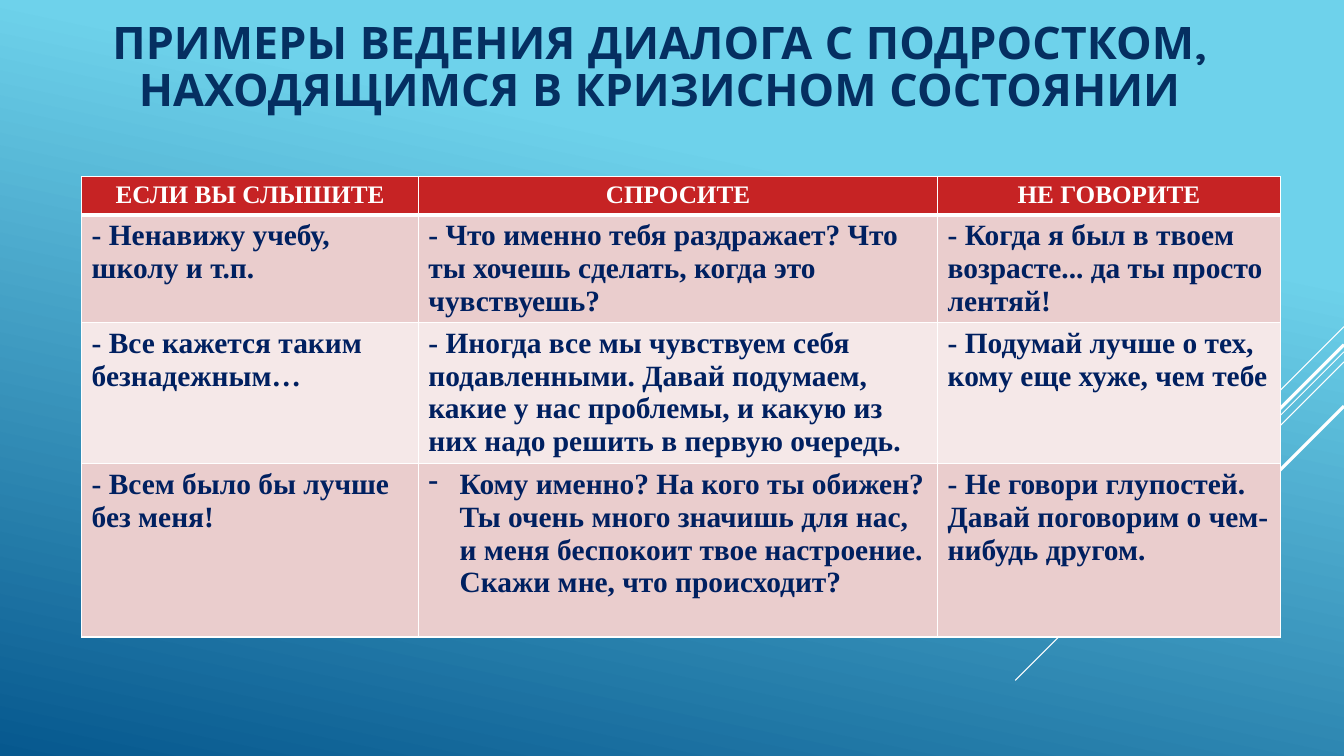
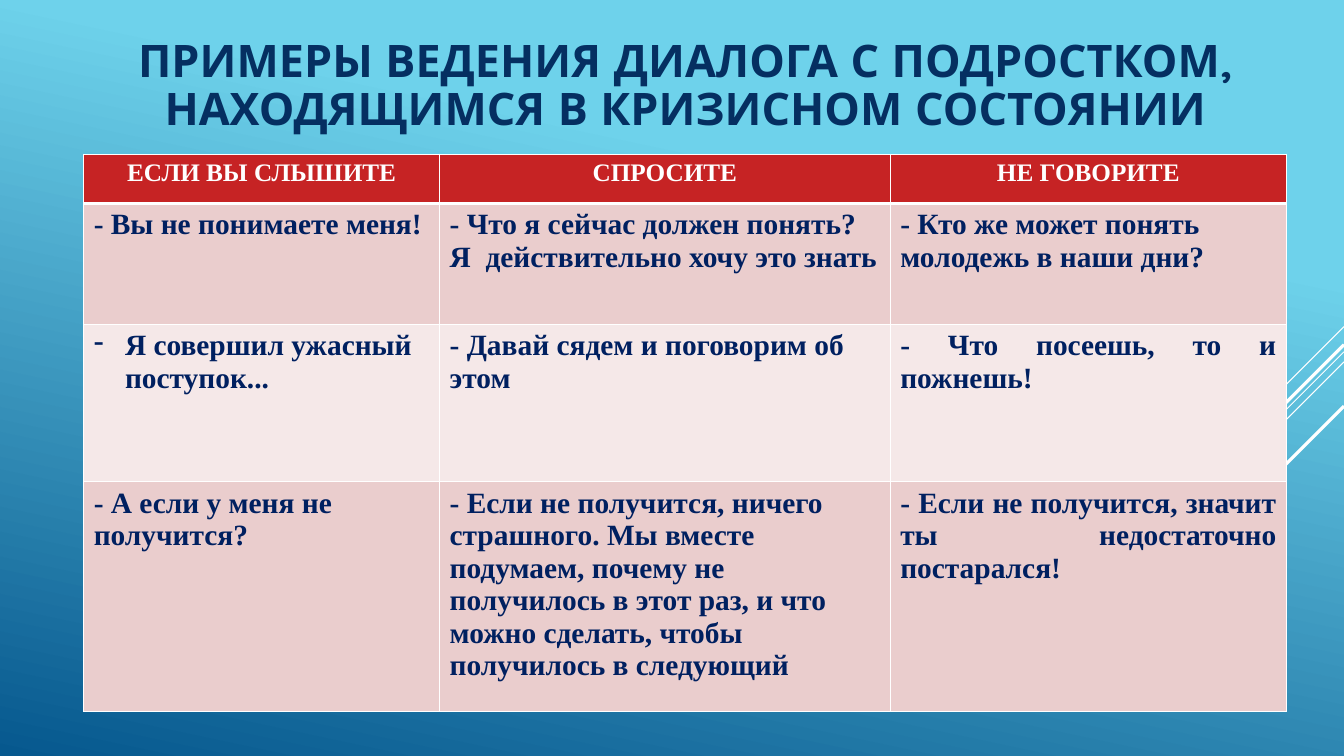
from dataclasses import dataclass

from lxml import etree
from pptx import Presentation
from pptx.dml.color import RGBColor
from pptx.enum.shapes import MSO_CONNECTOR
from pptx.enum.text import MSO_ANCHOR, MSO_AUTO_SIZE, PP_ALIGN
from pptx.oxml.ns import qn
from pptx.util import Inches, Pt

LEFT, CENTER, JUSTIFY = PP_ALIGN.LEFT, PP_ALIGN.CENTER, PP_ALIGN.JUSTIFY
MIDDLE = MSO_ANCHOR.MIDDLE
NO_AUTOFIT = MSO_AUTO_SIZE.NONE
STRAIGHT = MSO_CONNECTOR.STRAIGHT
TITLE_ONLY = 5


@dataclass(frozen=True)
class Theme:
    """Colours, fonts and type sizes of the deck."""
    sky: str = "6ED2EB"
    deep: str = "06588E"
    white: str = "FFFFFF"
    title: str = "052F61"
    text: str = "002060"
    header: str = "C62324"
    bands: tuple = ("EACDCD", "F5E8E8")
    title_font: str = "Quicksand"
    table_font: str = "Times New Roman"
    title_size: int = 32
    header_size: int = 18
    text_size: int = 21


@dataclass(frozen=True)
class Bullet:
    """Cell text with a hanging dash."""
    text: str


@dataclass(frozen=True)
class Justified:
    """Cell text aligned to both edges."""
    text: str


THEME = Theme()
TITLE = "ПРИМЕРЫ ВЕДЕНИЯ ДИАЛОГА С ПОДРОСТКОМ, НАХОДЯЩИМСЯ В КРИЗИСНОМ СОСТОЯНИИ"
HEADERS = ("ЕСЛИ ВЫ СЛЫШИТЕ", "СПРОСИТЕ", "НЕ ГОВОРИТЕ")
RAYS = ((3.24, 1, 0.75), (3.49, 3.26, 0.75), (3.59, 2.07, 0.75),
        (3.42, 1.91, 2.25), (4.03, 1.39, 2.25))

SLIDES = (
    dict(
        title_box=(0, -0.14, 13.09, 1.65),
        table_at=(0.81, 1.75),
        cols=(3.34, 5.15, 3.4),
        heights=(0.38, 1.06, 1.4, 1.72),
        rows=(
            ("- Ненавижу учебу, школу и т.п.",
             "- Что именно тебя раздражает? Что ты хочешь сделать, когда это чувствуешь?",
             "- Когда я был в твоем возрасте... да ты просто лентяй!"),
            ("- Все кажется таким безнадежным…",
             "- Иногда все мы чувствуем себя подавленными. Давай подумаем, "
             "какие у нас проблемы, и какую из них надо решить в первую очередь.",
             "- Подумай лучше о тех, кому еще хуже, чем тебе"),
            ("- Всем было бы лучше без меня!",
             Bullet("Кому именно? На кого ты обижен? Ты очень много значишь для нас, "
                    "и меня беспокоит твое настроение. Скажи мне, что происходит?"),
             "- Не говори глупостей. Давай поговорим о чем-нибудь другом."),
        ),
    ),
    dict(
        title_box=(0.62, 0.04, 12.36, 1.65),
        table_at=(0.83, 1.53),
        cols=(3.53, 4.47, 3.93),
        heights=(0.49, 1.2, 1.56, 2.28),
        rows=(
            ("- Вы не понимаете меня!",
             "- Что я сейчас должен понять? Я  действительно хочу это знать",
             "- Кто же может понять молодежь в наши дни?"),
            (Bullet("Я совершил ужасный поступок..."),
             "- Давай сядем и поговорим об этом",
             Justified("- Что посеешь, то и пожнешь!")),
            ("- А если у меня не получится?",
             "- Если не получится, ничего страшного. Мы вместе подумаем, почему не "
             "получилось в этот раз, и что можно сделать, чтобы получилось в следующий",
             Justified("- Если не получится, значит ты недостаточно постарался!")),
        ),
    ),
)


def rgb(color):
    """Turn a hex string into a colour."""
    return RGBColor.from_string(color)


def style_paragraph(p, font, size, color, align):
    """Apply bold type and alignment to a paragraph."""
    p.alignment = align
    p.font.name, p.font.size, p.font.bold = font, Pt(size), True
    p.font.color.rgb = rgb(color)


def add_background(master):
    """Fill the master with the blue gradient."""
    fill = master.background.fill
    fill.gradient()
    fill.gradient_angle = 258
    stops = ((0.27, THEME.sky), (1, THEME.deep))
    for stop, (position, color) in zip(fill.gradient_stops, stops):
        stop.position = position
        stop.color.rgb = rgb(color)


def add_rays(slide, master, right):
    """Draw the diagonal rays from the right edge and move them to the master."""
    for i, (top, run, width) in enumerate(RAYS):
        ray = slide.shapes.add_connector(
            STRAIGHT, Inches(right), Inches(top), Inches(right - run), Inches(top + run))
        ray.line.color.rgb = rgb(THEME.white)
        ray.line.width = Pt(width)
        ray.name = f"Ray {i + 1}"
        el = ray.element
        etree.SubElement(el.spPr, qn("a:effectLst"))
        el.nvCxnSpPr.cNvPr.id = 100 + i
        master.shapes.element.append(el)


def add_title(slide, box):
    """Place the title placeholder in its box."""
    sp = slide.shapes.title
    sp.left, sp.top, sp.width, sp.height = map(Inches, box)
    tf = sp.text_frame
    tf.text = TITLE
    tf.word_wrap = True
    tf.auto_size = NO_AUTOFIT
    tf.vertical_anchor = MIDDLE
    p = tf.paragraphs[0]
    p.line_spacing = 0.88
    style_paragraph(p, THEME.title_font, THEME.title_size, THEME.title, CENTER)


def set_borders(cell, bottom):
    """Give a cell white borders with the chosen bottom width."""
    tcPr = cell._tc.get_or_add_tcPr()
    for i, (side, width) in enumerate((("L", 1), ("R", 1), ("T", 1), ("B", bottom))):
        ln = etree.Element(qn(f"a:ln{side}"), w=str(Pt(width)))
        fill = etree.SubElement(ln, qn("a:solidFill"))
        etree.SubElement(fill, qn("a:srgbClr"), val=THEME.white)
        tcPr.insert(i, ln)


def set_dash(p):
    """Turn a paragraph into a hanging dash item."""
    pPr = p._p.get_or_add_pPr()
    indent = Inches(0.31)
    pPr.set("marL", str(indent))
    pPr.set("indent", str(-indent))
    pPr.insert(0, etree.Element(qn("a:buFontTx")))
    pPr.insert(1, etree.Element(qn("a:buChar"), char="-"))


def fill_cell(cell, content, row):
    """Write and format one table cell."""
    header = row == 0
    cell.fill.solid()
    cell.fill.fore_color.rgb = rgb(THEME.header if header else THEME.bands[(row - 1) % 2])
    set_borders(cell, 3 if header else 1)
    cell.text = content if isinstance(content, str) else content.text
    p = cell.text_frame.paragraphs[0]
    if header:
        style_paragraph(p, THEME.table_font, THEME.header_size, THEME.white, CENTER)
    else:
        align = JUSTIFY if isinstance(content, Justified) else LEFT
        style_paragraph(p, THEME.table_font, THEME.text_size, THEME.text, align)
    if isinstance(content, Bullet):
        set_dash(p)


def add_dialogue_table(slide, at, cols, heights, rows):
    """Build the three-column table of phrases."""
    left, top = at
    table = slide.shapes.add_table(
        len(heights), len(cols), Inches(left), Inches(top),
        Inches(sum(cols)), Inches(sum(heights))).table
    for column, width in zip(table.columns, cols):
        column.width = Inches(width)
    for r, (height, contents) in enumerate(zip(heights, (HEADERS, *rows))):
        table.rows[r].height = Inches(height)
        for c, content in enumerate(contents):
            fill_cell(table.cell(r, c), content, r)


def add_dialogue_slide(prs, title_box, table_at, cols, heights, rows):
    """Add one slide with a title and a table of phrases."""
    slide = prs.slides.add_slide(prs.slide_layouts[TITLE_ONLY])
    add_title(slide, title_box)
    add_dialogue_table(slide, table_at, cols, heights, rows)
    return slide


def main():
    """Build and save the deck."""
    prs = Presentation()
    prs.slide_width, prs.slide_height = Inches(13.33), Inches(7.5)
    add_background(prs.slide_master)
    slides = [add_dialogue_slide(prs, **content) for content in SLIDES]
    add_rays(slides[0], prs.slide_master, 13.33)
    prs.save("out.pptx")


if __name__ == "__main__":
    main()
